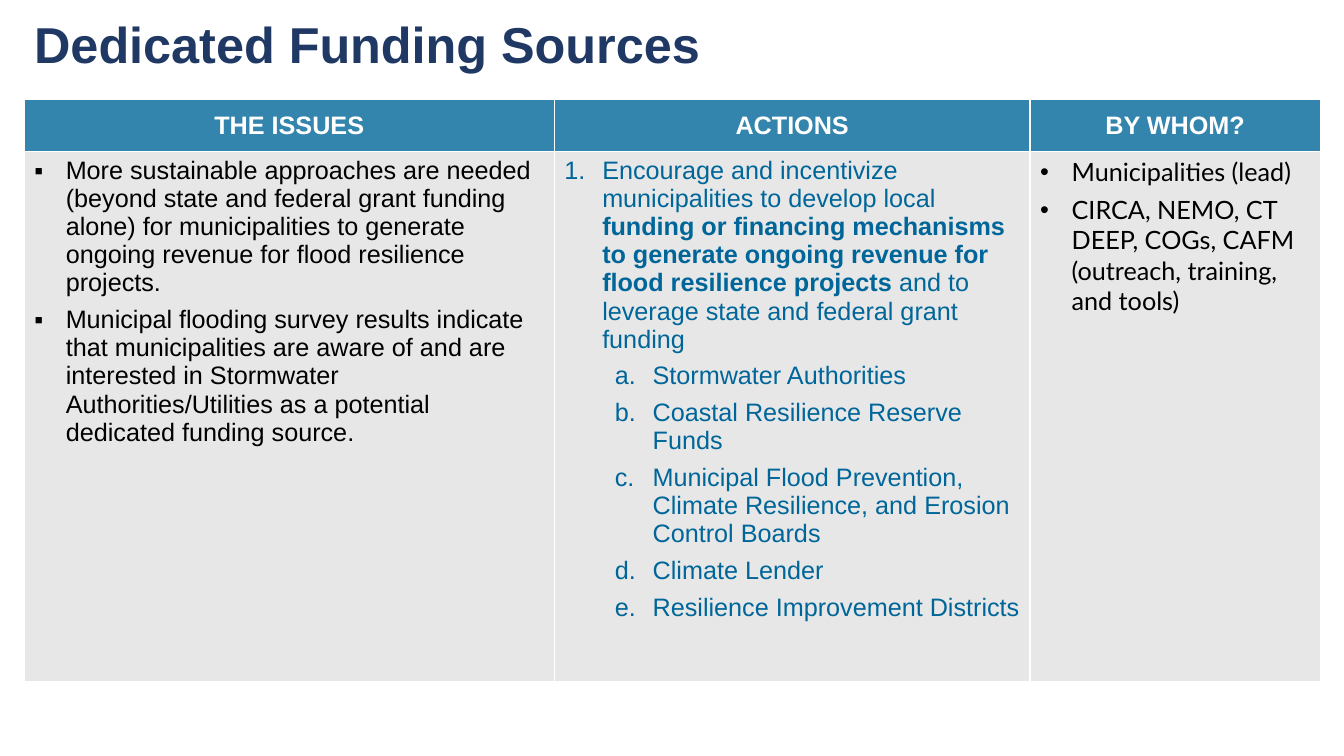
from lxml import etree
from pptx import Presentation
from pptx.dml.color import RGBColor
from pptx.enum.text import MSO_ANCHOR, PP_ALIGN
from pptx.oxml.ns import qn
from pptx.util import Pt

MIDDLE = MSO_ANCHOR.MIDDLE
TOP = MSO_ANCHOR.TOP
CENTER = PP_ALIGN.CENTER
LEFT = PP_ALIGN.LEFT

COLORS = {
    "navy": "203864",
    "header": "3385AD",
    "body": "E7E7E7",
    "action": "006699",
    "black": "000000",
    "white": "FFFFFF",
}

COLUMN_WIDTHS = (378.7, 339.8, 207.4)
ROW_HEIGHTS = (36.7, 378.7)
HEADINGS = ("THE ISSUES", "ACTIONS", "BY WHOM?")

ISSUES = (
    "More sustainable approaches are needed (beyond state and federal grant funding alone) "
    "for municipalities to generate ongoing revenue for flood resilience projects.",
    "Municipal flooding survey results indicate that municipalities are aware of and are "
    "interested in Stormwater Authorities/Utilities as a potential dedicated funding source.",
)
MAIN_ACTION = (
    ("Encourage and incentivize municipalities to develop local ", False),
    ("funding or financing mechanisms to generate ongoing revenue for "
     "flood resilience projects", True),
    (" and to leverage state and federal grant funding", False),
)
MECHANISMS = (
    "Stormwater Authorities",
    "Coastal Resilience Reserve Funds",
    "Municipal Flood Prevention, Climate Resilience, and Erosion Control Boards",
    "Climate Lender",
    "Resilience Improvement Districts",
)
PARTIES = (
    "Municipalities (lead)",
    "CIRCA, NEMO, CT DEEP, COGs, CAFM (outreach, training, and tools)",
)


def add_run(paragraph, text, *, size=18, font="Arial", color="black", bold=False):
    run = paragraph.add_run()
    run.text = text
    run.font.size = Pt(size)
    run.font.name = font
    run.font.bold = bold
    run.font.color.rgb = RGBColor.from_string(COLORS[color])


def set_marker(paragraph, indent, hanging, bullet=None, numbering=None):
    properties = paragraph._p.get_or_add_pPr()
    properties.set("marL", str(Pt(indent)))
    properties.set("indent", str(-Pt(hanging)))
    if numbering:
        etree.SubElement(properties, qn("a:buFont"), typeface="+mj-lt")
        etree.SubElement(properties, qn("a:buAutoNum"), type=numbering)
    else:
        etree.SubElement(properties, qn("a:buFont"), typeface="Arial")
        etree.SubElement(properties, qn("a:buChar"), char=bullet)


class FundingSlide:
    def __init__(self, presentation):
        self.slide = presentation.slides.add_slide(presentation.slide_layouts[6])

    def title(self, text, left, top, width, height):
        box = self.slide.shapes.add_textbox(Pt(left), Pt(top), Pt(width), Pt(height))
        frame = box.text_frame
        frame.word_wrap = True
        frame.vertical_anchor = MIDDLE
        add_run(frame.paragraphs[0], text, size=36, color="navy", bold=True)

    def table(self, left, top, widths, heights):
        frame = self.slide.shapes.add_table(
            len(heights), len(widths), Pt(left), Pt(top), Pt(sum(widths)), Pt(sum(heights)))
        table = frame.table
        table.horz_banding = False
        for column, width in zip(table.columns, widths):
            column.width = Pt(width)
        for row, height in zip(table.rows, heights):
            row.height = Pt(height)
        return table

    def fill(self, cell, color):
        cell.fill.solid()
        cell.fill.fore_color.rgb = RGBColor.from_string(COLORS[color])

    def heading(self, cell, text):
        self.fill(cell, "header")
        cell.vertical_anchor = MIDDLE
        paragraph = cell.text_frame.paragraphs[0]
        paragraph.alignment = CENTER
        add_run(paragraph, text, color="white", bold=True)

    def item_list(self, cell, items, level=0, color="black", font="Arial", **marker):
        self.fill(cell, "body")
        cell.vertical_anchor = TOP
        frame = cell.text_frame
        for item in items:
            started = frame.paragraphs[0].runs
            paragraph = frame.add_paragraph() if started else frame.paragraphs[0]
            paragraph.level = level
            paragraph.alignment = LEFT
            set_marker(paragraph, **marker)
            paragraph.space_after = Pt(6)
            parts = ((item, False),) if isinstance(item, str) else item
            for text, bold in parts:
                add_run(paragraph, text, color=color, font=font, bold=bold)


def main():
    presentation = Presentation()
    presentation.slide_width = Pt(960)
    presentation.slide_height = Pt(540)

    page = FundingSlide(presentation)
    page.title("Dedicated Funding Sources", 17.3, 10, 925.9, 42)
    table = page.table(17.3, 71.3, COLUMN_WIDTHS, ROW_HEIGHTS)
    for column, heading in enumerate(HEADINGS):
        page.heading(table.cell(0, column), heading)

    issues, actions, parties = (table.cell(1, column) for column in range(len(HEADINGS)))
    page.item_list(issues, ISSUES, indent=22.5, hanging=22.5, bullet="▪")
    page.item_list(actions, [MAIN_ACTION], color="action",
                   indent=27, hanging=27, numbering="arabicPeriod")
    page.item_list(actions, MECHANISMS, level=1, color="action",
                   indent=63, hanging=27, numbering="alphaLcPeriod")
    page.item_list(parties, PARTIES, font="Lato", indent=22.5, hanging=22.5, bullet="•")

    presentation.save("out.pptx")


if __name__ == "__main__":
    main()
